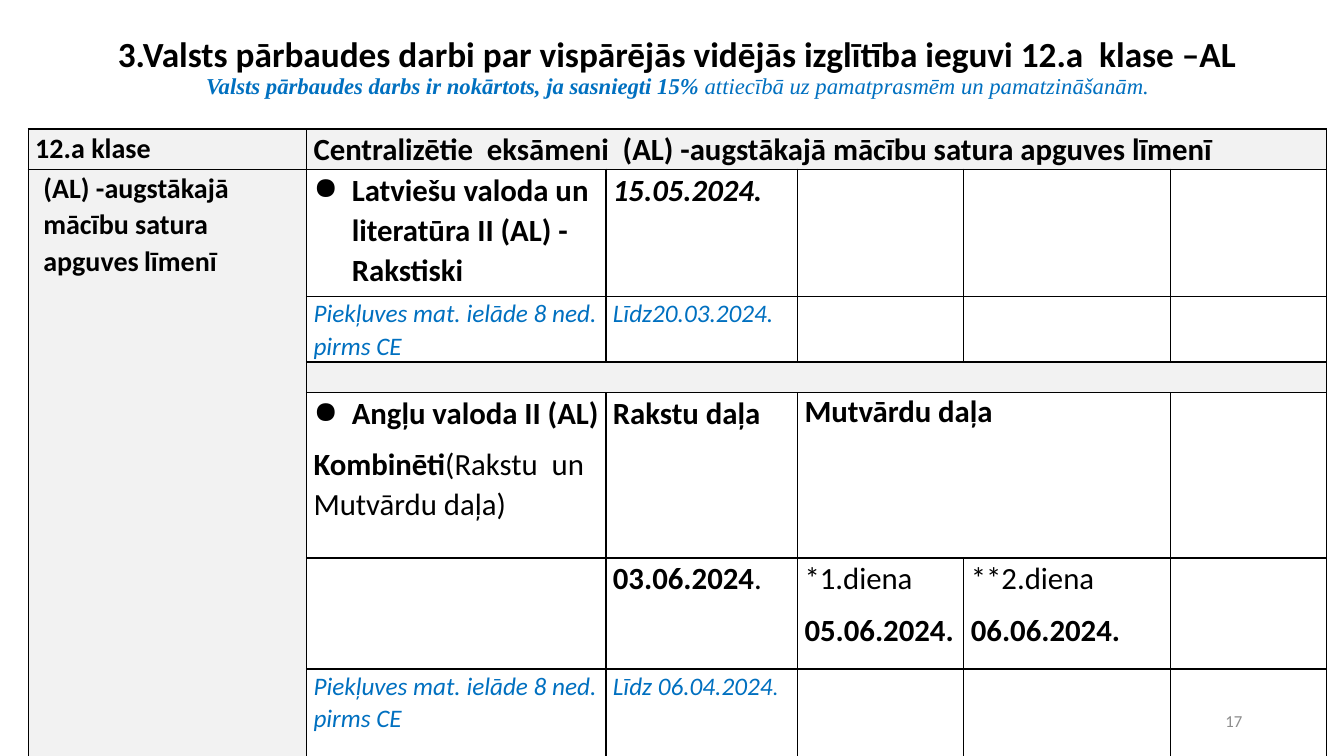
from dataclasses import dataclass

from lxml import etree
from pptx import Presentation
from pptx.dml.color import RGBColor
from pptx.enum import text as t
from pptx.oxml import ns
from pptx.util import Inches, Pt

COLORS = {"ink": "000000", "accent": "0070C0", "band": "F2F2F2", "number": "8C8C8C"}
COLUMN_WIDTHS = [2.76, 2.97, 1.9, 1.65, 2.05, 1.55]
ROW_HEIGHTS = [0.37, 1.26, 0.62, 0.3, 1.64, 1.1, 0.94]
MERGES = [((0, 1), (0, 5)), ((1, 0), (6, 0)), ((3, 1), (3, 5)), ((4, 3), (4, 4))]
BANDED = {(0, 0), (0, 1), (1, 0), (3, 1)}
ACCESS_NOTE = "Piekļuves mat. ielāde 8 ned. pirms CE"


@dataclass(frozen=True)
class Run:
    text: str
    bold: bool | None = None
    size: float | None = None


@dataclass(frozen=True)
class Line:
    runs: tuple[Run, ...]
    size: float = 22
    bold: bool = True
    italic: bool = False
    color: str = "ink"
    font: str = "Calibri"
    bullet: bool = False
    indent: float = 0
    tab: float = 0
    spacing: float = 1.07
    after: float = 8
    align: t.PP_ALIGN = t.PP_ALIGN.LEFT


def plain(content: str, **style) -> Line:
    return Line((Run(content),), **style)


def access(*runs: Run) -> Line:
    """Blue italic line about access materials."""
    return Line(runs, size=18, bold=False, italic=True, color="accent")


HEADING = [
    plain("3.Valsts pārbaudes darbi par vispārējās vidējās izglītība ieguvi 12.a  klase –AL",
          size=25.2, spacing=0.9, after=0, align=t.PP_ALIGN.CENTER),
    Line((Run("Valsts pārbaudes darbs ir nokārtots, ja sasniegti 15% ", bold=True),
          Run("attiecībā uz pamatprasmēm un pamatzināšanām.")),
         size=16.2, bold=False, italic=True, color="accent", font="Times New Roman",
         spacing=0.9, after=0, align=t.PP_ALIGN.CENTER),
]
CELLS = {
    (0, 0): [plain("12.a klase", size=20)],
    (0, 1): [plain("Centralizētie  eksāmeni  (AL) -augstākajā mācību satura apguves līmenī")],
    (1, 0): [plain("(AL) -augstākajā mācību satura apguves\tlīmenī", size=20, indent=0.08, tab=1.78)],
    (1, 1): [plain("Latviešu valoda un literatūra II (AL) - Rakstiski", bullet=True, indent=0.38)],
    (1, 2): [plain("15.05.2024.", italic=True)],
    (2, 1): [access(Run(ACCESS_NOTE))],
    (2, 2): [access(Run("Līdz20.03.2024."))],
    (4, 1): [plain("Angļu valoda II (AL)", bullet=True, indent=0.38),
             Line((Run("Kombinēti", bold=True), Run("(Rakstu  un Mutvārdu daļa)")), bold=False)],
    (4, 2): [plain("Rakstu daļa")],
    (4, 3): [plain("Mutvārdu daļa", spacing=1, after=0)],
    (5, 2): [Line((Run("03.06.2024"), Run(".", bold=False)))],
    (5, 3): [plain("*1.diena", bold=False), plain("05.06.2024.")],
    (5, 4): [plain("**2.diena", bold=False), plain("06.06.2024.")],
    (6, 1): [access(Run(ACCESS_NOTE))],
    (6, 2): [access(Run("Līdz 06.04.2024"), Run(".", size=16))],
}
EMPTY = [Line((), size=18, bold=False)]


def write_lines(frame, lines: list[Line]) -> None:
    for index, line in enumerate(lines):
        paragraph = frame.paragraphs[0] if index == 0 else frame.add_paragraph()
        properties = paragraph._p.get_or_add_pPr()
        if line.indent:
            properties.set("marL", str(Inches(line.indent)))
            properties.set("indent", str(-Inches(line.indent) if line.bullet else 0))
        if line.bullet:
            etree.SubElement(properties, ns.qn("a:buChar"), char="●")
        if line.tab:
            stops = etree.SubElement(properties, ns.qn("a:tabLst"))
            etree.SubElement(stops, ns.qn("a:tab"), pos=str(Inches(line.tab)), algn="l")
        paragraph.alignment = line.align
        paragraph.line_spacing = line.spacing
        paragraph.space_before = Pt(0)
        paragraph.space_after = Pt(line.after)
        font = paragraph.font
        font.name, font.size = line.font, Pt(line.size)
        font.bold, font.italic = line.bold, line.italic
        font.color.rgb = RGBColor.from_string(COLORS[line.color])
        for part in line.runs:
            run = paragraph.add_run()
            run.text = part.text
            if part.bold is not None:
                run.font.bold = part.bold
            if part.size:
                run.font.size = Pt(part.size)


def draw_borders(cell) -> None:
    properties = cell._tc.get_or_add_tcPr()
    for side in ("lnL", "lnR", "lnT", "lnB"):
        border = etree.SubElement(properties, ns.qn(f"a:{side}"), w=str(Pt(1)))
        fill = etree.SubElement(border, ns.qn("a:solidFill"))
        etree.SubElement(fill, ns.qn("a:srgbClr"), val=COLORS["ink"])


def add_heading(slide) -> None:
    heading = slide.shapes.title
    heading.left, heading.top = Inches(0.28), Inches(0.15)
    heading.width, heading.height = Inches(12.88), Inches(1.13)
    frame = heading.text_frame
    frame.auto_size = t.MSO_AUTO_SIZE.NONE
    frame.vertical_anchor = t.MSO_ANCHOR.MIDDLE
    frame.margin_bottom = Inches(0.12)
    write_lines(frame, HEADING)


def add_schedule(slide) -> None:
    schedule = slide.shapes.add_table(
        len(ROW_HEIGHTS), len(COLUMN_WIDTHS), Inches(0.28), Inches(1.28),
        Inches(sum(COLUMN_WIDTHS)), Inches(sum(ROW_HEIGHTS))).table
    schedule.first_row = schedule.horz_banding = False
    for column, width in zip(schedule.columns, COLUMN_WIDTHS):
        column.width = Inches(width)
    for row, height in zip(schedule.rows, ROW_HEIGHTS):
        row.height = Inches(height)
    for first, last in MERGES:
        schedule.cell(*first).merge(schedule.cell(*last))
    for row in range(len(ROW_HEIGHTS)):
        for column in range(len(COLUMN_WIDTHS)):
            cell = schedule.cell(row, column)
            draw_borders(cell)
            cell.margin_left = cell.margin_right = Inches(0.07)
            cell.margin_top = cell.margin_bottom = 0
            if (row, column) in BANDED:
                cell.fill.solid()
                cell.fill.fore_color.rgb = RGBColor.from_string(COLORS["band"])
            else:
                cell.fill.background()
            write_lines(cell.text_frame, CELLS.get((row, column), EMPTY))


def add_page_number(slide) -> None:
    frame = slide.shapes.add_textbox(Inches(9.42), Inches(6.95), Inches(3), Inches(0.4)).text_frame
    frame.word_wrap = True
    frame.vertical_anchor = t.MSO_ANCHOR.MIDDLE
    write_lines(frame, [plain("17", size=12, bold=False, color="number",
                              spacing=1, after=0, align=t.PP_ALIGN.RIGHT)])


def main() -> None:
    deck = Presentation()
    deck.slide_width, deck.slide_height = Inches(13.33), Inches(7.5)
    slide = deck.slides.add_slide(deck.slide_layouts[5])
    add_heading(slide)
    add_schedule(slide)
    add_page_number(slide)
    deck.save("out.pptx")


if __name__ == "__main__":
    main()
